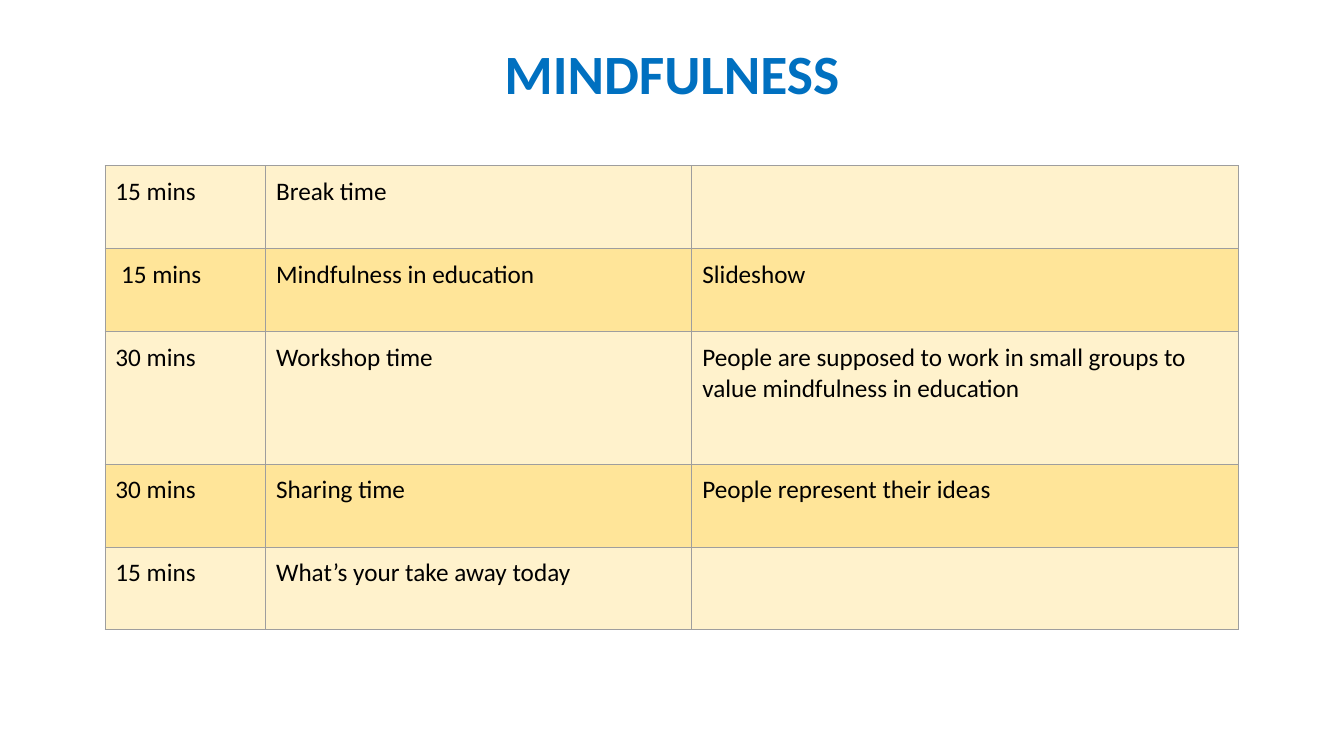
from lxml.etree import SubElement
from pptx import Presentation
from pptx.dml.color import RGBColor
from pptx.enum.text import MSO_ANCHOR, PP_ALIGN
from pptx.oxml.ns import qn
from pptx.util import Pt

PX = 9525  # EMU per px at 96 px to the inch
FONT = "Calibri"
COLORS = {
    "title": "0070C0",
    "text": "000000",
    "light": "FFF2CC",
    "dark": "FFE599",
    "border": "9E9E9E",
}
COL_WIDTHS = [153, 406, 521]
ROW_HEIGHTS = [79, 79, 126, 79, 79]
AGENDA = [
    ("15 mins", "Break time", ""),
    (" 15 mins", "Mindfulness in education", "Slideshow"),
    ("30 mins", "Workshop time",
     "People are supposed to work in small groups to value mindfulness in education"),
    ("30 mins", "Sharing time", "People represent their ideas"),
    ("15 mins", "What’s your take away today", ""),
]


def add_run(p, text, size, color, bold=False):
    r = p.add_run()
    r.text = text
    r.font.name = FONT
    r.font.size = Pt(size)
    r.font.bold = bold
    r.font.color.rgb = RGBColor.from_string(COLORS[color])


def add_borders(cell):
    tc_pr = cell._tc.get_or_add_tcPr()
    for side in ("a:lnL", "a:lnR", "a:lnT", "a:lnB"):
        ln = SubElement(tc_pr, qn(side), w=str(Pt(0.75)))
        fill = SubElement(ln, qn("a:solidFill"))
        SubElement(fill, qn("a:srgbClr"), val=COLORS["border"])


prs = Presentation()
prs.slide_width, prs.slide_height = 1280 * PX, 720 * PX
slide = prs.slides.add_slide(prs.slide_layouts[5])

# Title
title = slide.shapes.title
title.left, title.top, title.width, title.height = (n * PX for n in (160, 32, 960, 74))
tf = title.text_frame
tf.vertical_anchor = MSO_ANCHOR.BOTTOM
p = tf.paragraphs[0]
p.alignment = PP_ALIGN.CENTER
p.line_spacing = 0.9
add_run(p, "MINDFULNESS", 39.6, "title", bold=True)

# Agenda table
frame = slide.shapes.add_table(
    len(ROW_HEIGHTS), len(COL_WIDTHS), 100 * PX, 158 * PX,
    sum(COL_WIDTHS) * PX, sum(ROW_HEIGHTS) * PX)
table = frame.table
table.first_row = table.horz_banding = False
for col, width in zip(table.columns, COL_WIDTHS):
    col.width = width * PX
for i, (row, height, texts) in enumerate(zip(table.rows, ROW_HEIGHTS, AGENDA)):
    row.height = height * PX
    band = "dark" if i % 2 else "light"
    for cell, text in zip(row.cells, texts):
        cell.margin_left = cell.margin_right = 10 * PX
        cell.margin_top = cell.margin_bottom = 10 * PX
        add_borders(cell)
        cell.fill.solid()
        cell.fill.fore_color.rgb = RGBColor.from_string(COLORS[band])
        if text:
            add_run(cell.text_frame.paragraphs[0], text, 18, "text")

prs.save("out.pptx")
